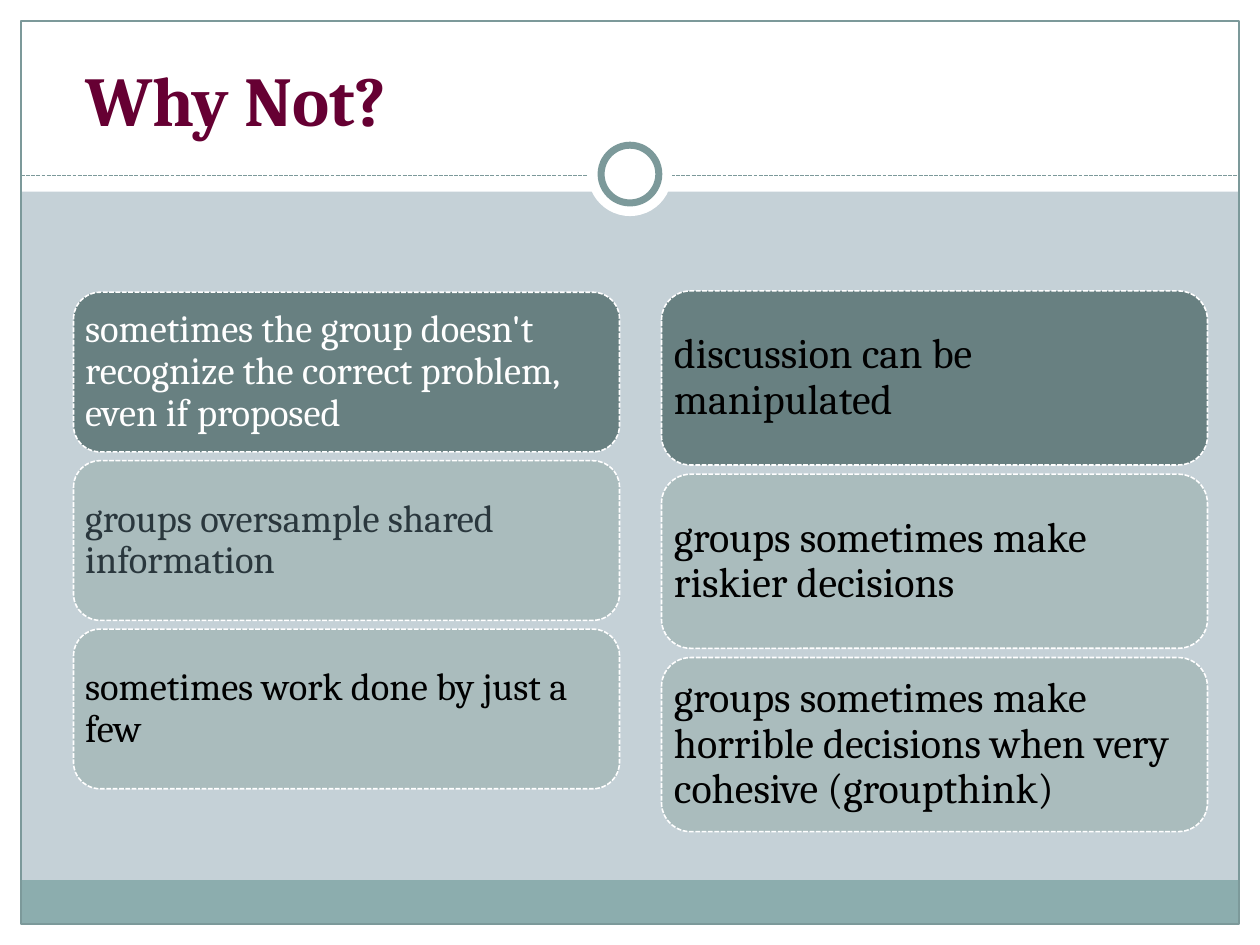
"""Build the "Why Not?" slide: a framed background and two columns of rounded cards."""
from lxml.etree import SubElement
from pptx import Presentation
from pptx.dml.color import RGBColor
from pptx.enum.dml import MSO_LINE
from pptx.enum.shapes import MSO_CONNECTOR, MSO_SHAPE
from pptx.enum.text import MSO_ANCHOR, PP_ALIGN
from pptx.oxml.ns import qn
from pptx.util import Pt

COLORS = {
    "background": "C5D1D7", "white": "FFFFFF", "footer": "8CADAE", "frame": "7C999A",
    "title": "660033", "dark": "688081", "light": "AABCBD", "slate": "2A373D", "black": "000000",
}
FONT = "Cambria"


def add_box(shapes, kind, box, fill=None, line=None, width=0.75):
    """Add a shape without shadow, with an optional fill and outline."""
    sp = shapes.add_shape(kind, *[Pt(v) for v in box])
    sp.shadow.inherit = False
    if fill:
        sp.fill.solid()
        sp.fill.fore_color.rgb = RGBColor.from_string(COLORS[fill])
    else:
        sp.fill.background()
    if line:
        sp.line.color.rgb = RGBColor.from_string(COLORS[line])
        sp.line.width = Pt(width)
    else:
        sp.line.fill.background()
    return sp


def add_text(p, text, size, color, bold=False):
    """Add one formatted run to a paragraph."""
    r = p.add_run()
    r.text = text
    r.font.name = FONT
    r.font.size = Pt(size)
    r.font.bold = bold
    r.font.color.rgb = RGBColor.from_string(COLORS[color])


prs = Presentation()
prs.slide_width, prs.slide_height = Pt(720), Pt(540)
s = prs.slides.add_slide(prs.slide_layouts[5])
s.background.fill.solid()
s.background.fill.fore_color.rgb = RGBColor.from_string(COLORS["background"])

bands = [
    ((0, 528, 720, 12), "white"),
    ((0, 0, 720, 109.5), "white"),
    ((0, 0, 12, 540), "white"),
    ((708, 0, 12, 540), "white"),
    ((12, 503, 696, 25), "footer"),
]
for box, fill in bands:
    add_box(s.shapes, MSO_SHAPE.RECTANGLE, box, fill)
add_box(s.shapes, MSO_SHAPE.RECTANGLE, (12, 12, 696, 516), line="frame")

divider = s.shapes.add_connector(MSO_CONNECTOR.STRAIGHT, Pt(12), Pt(100.5), Pt(708), Pt(100.5))
divider.line.color.rgb = RGBColor.from_string(COLORS["frame"])
divider.line.width = Pt(0.75)
divider.line.dash_style = MSO_LINE.SQUARE_DOT
SubElement(divider._element.spPr, qn("a:effectLst"))

add_box(s.shapes, MSO_SHAPE.OVAL, (336, 75.5, 48, 48), "white")
add_box(s.shapes, MSO_SHAPE.OVAL, (343.5, 83, 33, 33), "white", "frame", 4)

title = s.shapes.title
title.left, title.top, title.width, title.height = Pt(12), Pt(24), Pt(246), Pt(60)
s.shapes._spTree.append(title._element)
tf = title.text_frame
tf.vertical_anchor = MSO_ANCHOR.BOTTOM
p = tf.paragraphs[0]
p.alignment = PP_ALIGN.CENTER
add_text(p, "Why Not?", 40, "title", True)

columns = [
    (42, 167, 91.25, 96.25, 22, [
        ("sometimes the group doesn't recognize the correct problem, even if proposed", "white"),
        ("groups oversample shared information", "slate"),
        ("sometimes work done by just a few", "black"),
    ]),
    (378, 166.25, 99.5, 104.75, 24, [
        ("discussion can be manipulated", "black"),
        ("groups sometimes make riskier decisions", "black"),
        ("groups sometimes make horrible decisions when very cohesive (groupthink)", "black"),
    ]),
]
for left, top, height, pitch, size, cards in columns:
    for i, (text, color) in enumerate(cards):
        box = (left, top + i * pitch, 312, height)
        fill = "light" if i else "dark"
        sp = add_box(s.shapes, MSO_SHAPE.ROUNDED_RECTANGLE, box, fill, "white", 0.9)
        sp.line.dash_style = MSO_LINE.SQUARE_DOT
        tf = sp.text_frame
        tf.word_wrap = True
        tf.vertical_anchor = MSO_ANCHOR.MIDDLE
        tf.margin_left = tf.margin_right = tf.margin_top = tf.margin_bottom = Pt(2.25)
        p = tf.paragraphs[0]
        p.alignment = PP_ALIGN.LEFT
        p.line_spacing = 0.9
        add_text(p, text, size, color)

prs.save("out.pptx")
